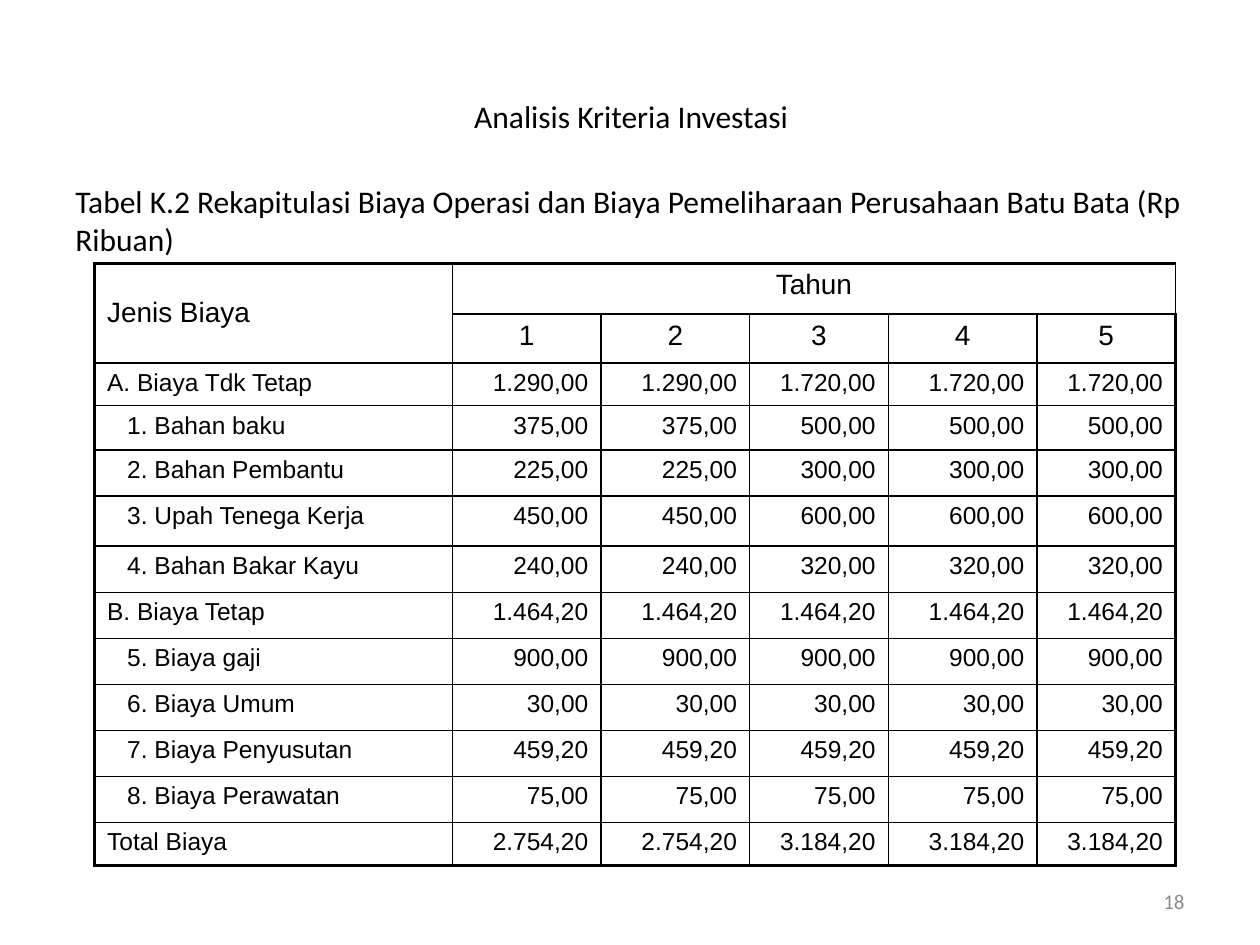
from pptx import Presentation
from pptx.dml.color import RGBColor as Rgb
from pptx.enum.text import MSO_ANCHOR as Anchor, PP_ALIGN as Align
from pptx.oxml.ns import qn
from pptx.util import Inches, Pt
from lxml.etree import Element, SubElement

WIDE, HIGH = Inches(10), Inches(7.5)
HUES = {"ink": "000000", "gray": "8C8C8C"}
COLS = [2.84, 1.18, 1.18, 1.1, 1.18, 1.1]
TALL = 4.78
FIXED = {0: 0.4, 1: 0.39, 2: 0.34, 3: 0.35, 5: 0.4, 12: 0.34}
COSTS = [
    ("A. Biaya Tdk Tetap", "1.290,00", "1.720,00"),
    ("1. Bahan baku", "375,00", "500,00"),
    ("2. Bahan Pembantu", "225,00", "300,00"),
    ("3. Upah Tenega Kerja", "450,00", "600,00"),
    ("4. Bahan Bakar Kayu", "240,00", "320,00"),
    ("B. Biaya Tetap", "1.464,20", "1.464,20"),
    ("5. Biaya gaji", "900,00", "900,00"),
    ("6. Biaya Umum", "30,00", "30,00"),
    ("7. Biaya Penyusutan", "459,20", "459,20"),
    ("8. Biaya Perawatan", "75,00", "75,00"),
    ("Total Biaya", "2.754,20", "3.184,20"),
]


def write(frame, text, size, font, align=Align.LEFT, hue="ink"):
    para = frame.paragraphs[0]
    para.alignment = align
    run = para.add_run()
    run.text = text
    run.font.size = Pt(size)
    run.font.name = font
    run.font.color.rgb = Rgb.from_string(HUES[hue])
    return para


def add_text(slide, box, text, size, align, anchor, hue="ink"):
    x, y, w, h = box
    shape = slide.shapes.add_textbox(
        int(x * WIDE), int(y * HIGH), int(w * WIDE), int(h * HIGH))
    frame = shape.text_frame
    frame.word_wrap = True
    frame.vertical_anchor = anchor
    write(frame, text, size, "Calibri", align, hue)


def add_edges(cell, outer):
    props = cell._tc.get_or_add_tcPr()
    for spot, side in enumerate("LRTB"):
        line = Element(qn("a:ln" + side), w=str(Pt(2.25 if side in outer else 1)))
        fill = SubElement(line, qn("a:solidFill"))
        SubElement(fill, qn("a:srgbClr"), val=HUES["ink"])
        props.insert(spot, line)


def style_grid(table):
    rows, cols = len(table.rows), len(table.columns)
    for r in range(rows):
        for c in range(cols):
            cell = table.cell(r, c)
            cell.fill.background()
            edges = {"L": c == 0, "R": c == cols - 1, "T": r == 0, "B": r == rows - 1}
            add_edges(cell, [side for side, on in edges.items() if on])


def fill_head(table):
    kind = table.cell(0, 0)
    kind.merge(table.cell(1, 0))
    kind.vertical_anchor = Anchor.MIDDLE
    write(kind.text_frame, "Jenis Biaya", 16, "Arial")
    years = table.cell(0, 1)
    years.merge(table.cell(0, 5))
    write(years.text_frame, "Tahun", 16, "Arial", Align.CENTER)
    for year in range(1, 6):
        write(table.cell(1, year).text_frame, str(year), 16, "Arial", Align.CENTER)


def fill_costs(table):
    for r, (label, early, late) in enumerate(COSTS, 2):
        para = write(table.cell(r, 0).text_frame, label, 14, "Arial")
        if label[0].isdigit():
            para._p.get_or_add_pPr().set("marL", str(Inches(0.16)))
        for c, cost in enumerate([early] * 2 + [late] * 3, 1):
            write(table.cell(r, c).text_frame, cost, 14, "Arial", Align.RIGHT)


def add_costs(slide):
    count = len(COSTS) + 2
    table = slide.shapes.add_table(
        count, len(COLS), int(0.075 * WIDE), Inches(2.09),
        Inches(sum(COLS)), Inches(TALL)).table
    table.first_row = table.horz_banding = False
    for col, width in zip(table.columns, COLS):
        col.width = Inches(width)
    rest = (TALL - sum(FIXED.values())) / (count - len(FIXED))
    for r, row in enumerate(table.rows):
        row.height = Inches(FIXED.get(r, rest))
    style_grid(table)
    fill_head(table)
    fill_costs(table)


def main():
    deck = Presentation()
    deck.slide_width, deck.slide_height = WIDE, HIGH
    slide = deck.slides.add_slide(deck.slide_layouts[6])
    add_text(slide, (0.717, 0.927, 0.233, 0.053), "18", 12,
             Align.RIGHT, Anchor.MIDDLE, "gray")
    add_text(slide, (0.051, 0.039, 0.9, 0.167), "Analisis Kriteria Investasi",
             18, Align.CENTER, Anchor.MIDDLE)
    add_text(slide, (0.05, 0.186, 0.907, 0.708),
             "Tabel K.2 Rekapitulasi Biaya Operasi dan Biaya Pemeliharaan "
             "Perusahaan Batu Bata (Rp Ribuan)", 18, Align.LEFT, Anchor.TOP)
    add_costs(slide)
    deck.save("out.pptx")


if __name__ == "__main__":
    main()
